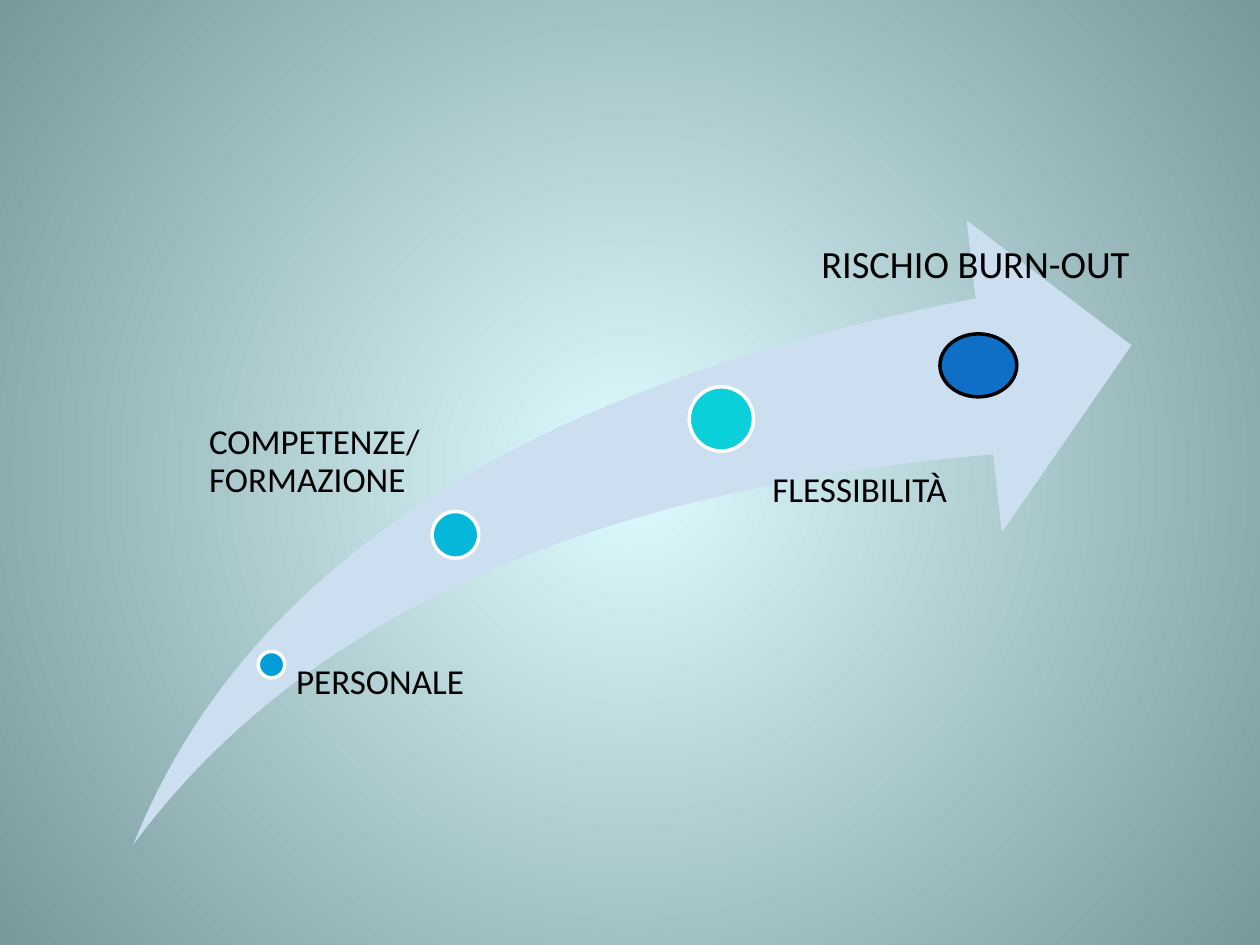
from dataclasses import dataclass

import lxml.etree
import pptx
import pptx.dml.color
import pptx.enum.shapes
import pptx.enum.text
import pptx.oxml.ns
import pptx.shapes.autoshape
import pptx.slide
import pptx.util

Inches = pptx.util.Inches
Color = pptx.dml.color.RGBColor
ShapeType = pptx.enum.shapes.MSO_SHAPE


@dataclass(frozen=True)
class Theme:
    font: str = "Calibri"
    label_size: float = 20
    risk_size: float = 22
    line_width: float = 2
    text: str = "000000"
    arrow: str = "CCDFF1"
    milestone_line: str = "FFFFFF"
    risk: str = "0F6FC6"
    risk_line: str = "000000"
    background_center: str = "DEFBFF"
    background_edge: str = "79989C"


@dataclass(frozen=True)
class Box:
    left: float
    top: float
    width: float
    height: float

    def lengths(self) -> tuple[int, ...]:
        return tuple(map(Inches, (self.left, self.top, self.width, self.height)))


@dataclass(frozen=True)
class Milestone:
    lines: tuple[str, ...]
    color: str
    dot: Box
    label: Box
    indent: float


THEME = Theme()
MILESTONES = (
    Milestone(("PERSONALE",), "009DD9", Box(2.05, 5.17, 0.21, 0.21),
              Box(2.24, 5.27, 1.85, 1.43), 0.11),
    Milestone(("COMPETENZE/", "FORMAZIONE"), "05B7D9", Box(3.43, 4.06, 0.37, 0.37),
              Box(1.46, 3.37, 1.9, 0.93), 0.2),
    Milestone(("FLESSIBILITÀ",), "0BD0D9", Box(5.47, 3.07, 0.51, 0.51),
              Box(5.86, 3.75, 1.9, 0.97), 0.27),
)


def paint_background(slide: pptx.slide.Slide) -> None:
    """Fill the background with a circular gradient spreading from the center."""
    fill = slide.background.fill
    fill.gradient()
    colors = (THEME.background_center, THEME.background_edge)
    for stop, color, position in zip(fill.gradient_stops, colors, (0, 1)):
        stop.color.rgb = Color.from_string(color)
        stop.position = position
    qualified = pptx.oxml.ns.qn
    linear = next(slide.background._cSld.iter(qualified("a:lin")))
    circle = lxml.etree.Element(qualified("a:path"), {"path": "circle"})
    lxml.etree.SubElement(circle, qualified("a:fillToRect"),
                          dict.fromkeys("ltrb", "50000"))
    linear.getparent().replace(linear, circle)


def add_filled_shape(slide: pptx.slide.Slide, kind: ShapeType, box: Box, color: str,
                     line_color: str | None = None) -> pptx.shapes.autoshape.Shape:
    shape = slide.shapes.add_shape(kind, *box.lengths())
    shape.shadow.inherit = False
    shape.fill.solid()
    shape.fill.fore_color.rgb = Color.from_string(color)
    if line_color is None:
        shape.line.fill.background()
    else:
        shape.line.color.rgb = Color.from_string(line_color)
        shape.line.width = pptx.util.Pt(THEME.line_width)
    return shape


def add_text(slide: pptx.slide.Slide, box: Box, lines: tuple[str, ...],
             size: float) -> pptx.shapes.autoshape.Shape:
    shape = slide.shapes.add_textbox(*box.lengths())
    shape.text_frame.word_wrap = True
    paragraph = shape.text_frame.paragraphs[0]
    for index, line in enumerate(lines):
        if index:
            paragraph.add_line_break()
        run = paragraph.add_run()
        run.text = line
        run.font.name = THEME.font
        run.font.size = pptx.util.Pt(size)
        run.font.color.rgb = Color.from_string(THEME.text)
    return shape


def add_milestone(slide: pptx.slide.Slide, milestone: Milestone) -> None:
    add_filled_shape(slide, ShapeType.OVAL, milestone.dot, milestone.color,
                     THEME.milestone_line)
    label = add_text(slide, milestone.label, milestone.lines, THEME.label_size)
    frame = label.text_frame
    frame.margin_left = Inches(milestone.indent)
    frame.margin_top = frame.margin_right = frame.margin_bottom = 0
    frame.paragraphs[0].line_spacing = 0.9


def main() -> None:
    presentation = pptx.Presentation()
    presentation.slide_width = Inches(10)
    presentation.slide_height = Inches(7.5)
    blank_layout = presentation.slide_layouts[6]
    slide = presentation.slides.add_slide(blank_layout)
    paint_background(slide)

    arrow = add_filled_shape(slide, ShapeType.SWOOSH_ARROW,
                             Box(1.06, 1.75, 7.92, 4.95), THEME.arrow)
    arrow.adjustments[0] = arrow.adjustments[1] = 0.25
    for milestone in MILESTONES:
        add_milestone(slide, milestone)

    add_filled_shape(slide, ShapeType.FLOWCHART_CONNECTOR, Box(7.46, 2.65, 0.61, 0.5),
                     THEME.risk, THEME.risk_line)
    risk = add_text(slide, Box(6.42, 1.86, 2.91, 0.47), ("RISCHIO BURN-OUT",),
                    THEME.risk_size)
    risk.text_frame.auto_size = pptx.enum.text.MSO_AUTO_SIZE.SHAPE_TO_FIT_TEXT
    presentation.save("out.pptx")


if __name__ == "__main__":
    main()
